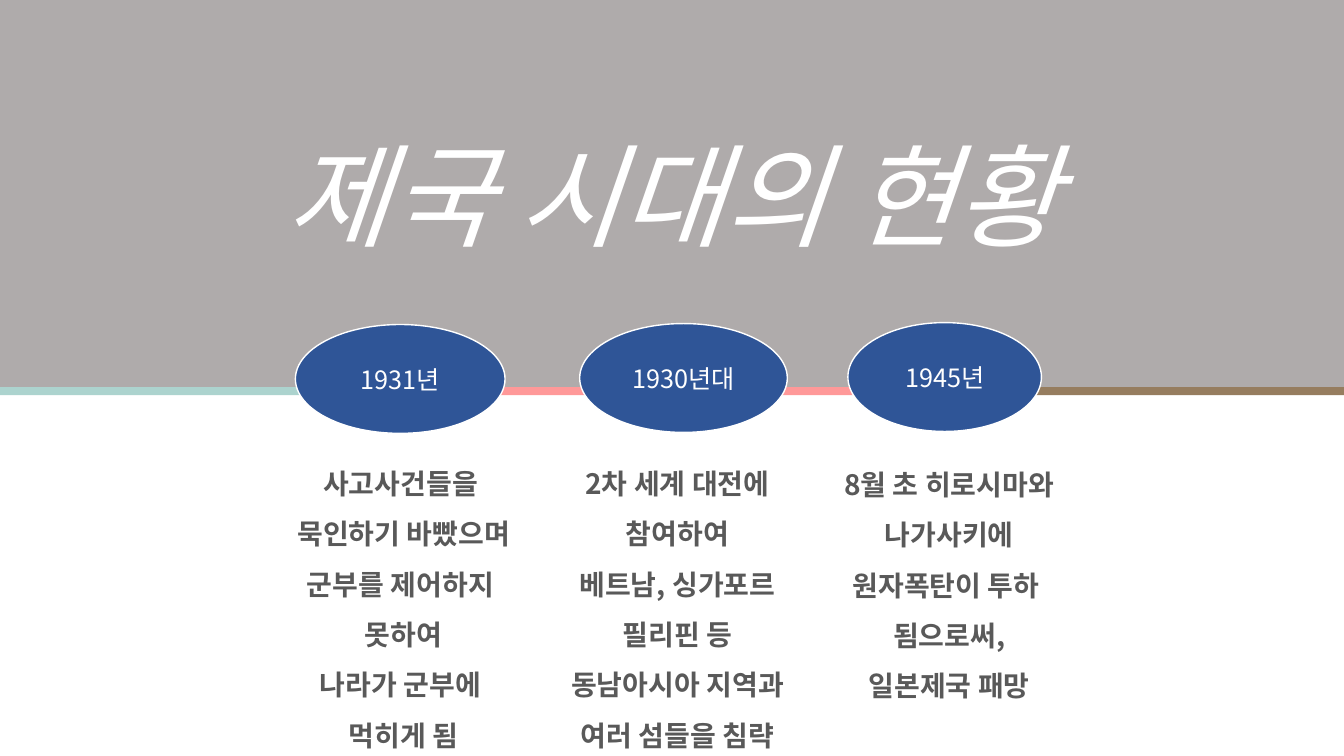
from dataclasses import dataclass

from lxml import etree
from pptx import Presentation
from pptx.dml.color import RGBColor
from pptx.enum.shapes import MSO_SHAPE
from pptx.enum.text import MSO_ANCHOR, MSO_AUTO_SIZE, PP_ALIGN
from pptx.oxml.ns import qn
from pptx.util import Inches, Pt

RECTANGLE, OVAL = MSO_SHAPE.RECTANGLE, MSO_SHAPE.OVAL
MIDDLE, CENTER = MSO_ANCHOR.MIDDLE, PP_ALIGN.CENTER
GROW = MSO_AUTO_SIZE.SHAPE_TO_FIT_TEXT
SLIDE_WIDTH, SLIDE_HEIGHT = Inches(13.33), Inches(7.5)


@dataclass(frozen=True)
class Theme:
    font: str = "Noto Sans CJK KR"
    header: str = "AFABAB"
    light: str = "FFFFFF"
    body: str = "595959"
    oval: str = "2F5597"
    strips: tuple = ("ACD3CE", "FF9999", "967D5F")
    title_size: int = 80
    year_size: int = 18
    body_size: int = 20
    line_spacing: float = 1.5


THEME = Theme()


@dataclass(frozen=True)
class Box:
    """Percentages of the slide's width and height."""
    left: float
    top: float
    width: float
    height: float

    def place(self):
        return (
            round(SLIDE_WIDTH * self.left / 100),
            round(SLIDE_HEIGHT * self.top / 100),
            round(SLIDE_WIDTH * self.width / 100),
            round(SLIDE_HEIGHT * self.height / 100),
        )


@dataclass(frozen=True)
class Event:
    year: str
    lines: tuple
    box: Box
    oval_inset: float
    oval_width: float
    text_drop: float


HEADER_BOX = Box(0, 0, 100, 51.2)
STRIP_BOX = Box(0, 51.2, 100, 1.07)
OVAL_HEIGHT = 14.4

EVENTS = (
    Event("1931년",
          ("사고사건들을 ", "묵인하기 바빴으며", "군부를 제어하지 ",
           "못하여", "나라가 군부에 ", "먹히게 됨"),
          Box(18.9, 42.93, 22.28, 57.2), 3.08, 15.6, 15.87),
    Event("1930년대",
          ("2차 세계 대전에", "참여하여", "베트남, 싱가포르",
           "필리핀 등", "동남아시아 지역과", "여러 섬들을 침략"),
          Box(39.68, 42.8, 21.46, 57.33), 3.45, 15.45, 16),
    Event("1945년",
          ("8월 초 히로시마와", "나가사키에", "원자폭탄이 투하 ",
           "됨으로써,", "일본제국 패망"),
          Box(59.56, 42.67, 22.13, 50.93), 3.53, 14.4, 16.27),
)


def write_text(shape, lines, *, size, color, bold=False, italic=False, spacing=None):
    frame = shape.text_frame
    frame.word_wrap = True
    for index, line in enumerate(lines):
        paragraph = frame.add_paragraph() if index else frame.paragraphs[0]
        paragraph.alignment = CENTER
        if spacing:
            paragraph.line_spacing = spacing
        run = paragraph.add_run()
        run.text = line
        font = run.font
        font.name, font.size = THEME.font, Pt(size)
        font.bold, font.italic = bold, italic
        font.color.rgb = RGBColor.from_string(color)
        east_asian = etree.SubElement(run._r.get_or_add_rPr(), qn("a:ea"))
        east_asian.set("typeface", THEME.font)


def add_filled_shape(shapes, preset, box, fill, outline=None):
    shape = shapes.add_shape(preset, *box.place())
    shape.shadow.inherit = False
    shape.fill.solid()
    shape.fill.fore_color.rgb = RGBColor.from_string(fill)
    if outline:
        shape.line.color.rgb = RGBColor.from_string(outline)
        shape.line.width = Pt(1)
    else:
        shape.line.fill.background()
    shape.text_frame.vertical_anchor = MIDDLE
    return shape


def draw_header(slide, box):
    header = add_filled_shape(slide.shapes, RECTANGLE, box, THEME.header)
    write_text(header, ("제국 시대의 현황",), size=THEME.title_size,
               color=THEME.light, italic=True)


def draw_strips(slide, box):
    group = slide.shapes.add_group_shape()
    width = box.width / len(THEME.strips)
    for index, color in enumerate(THEME.strips):
        strip = Box(box.left + index * width, box.top, width, box.height)
        add_filled_shape(group.shapes, RECTANGLE, strip, color)


def draw_event(slide, event, box):
    text_box = Box(box.left, box.top + event.text_drop,
                   box.width, box.height - event.text_drop)
    description = slide.shapes.add_textbox(*text_box.place())
    write_text(description, event.lines, size=THEME.body_size, color=THEME.body,
               bold=True, spacing=THEME.line_spacing)
    description.text_frame.auto_size = GROW

    oval_box = Box(box.left + event.oval_inset, box.top, event.oval_width, OVAL_HEIGHT)
    oval = add_filled_shape(slide.shapes, OVAL, oval_box, THEME.oval, THEME.light)
    write_text(oval, (event.year,), size=THEME.year_size, color=THEME.light)


def main():
    presentation = Presentation()
    presentation.slide_width, presentation.slide_height = SLIDE_WIDTH, SLIDE_HEIGHT
    slide = presentation.slides.add_slide(presentation.slide_layouts[6])
    draw_header(slide, HEADER_BOX)
    draw_strips(slide, STRIP_BOX)
    for event in EVENTS:
        draw_event(slide, event, event.box)
    presentation.save("out.pptx")


if __name__ == "__main__":
    main()
